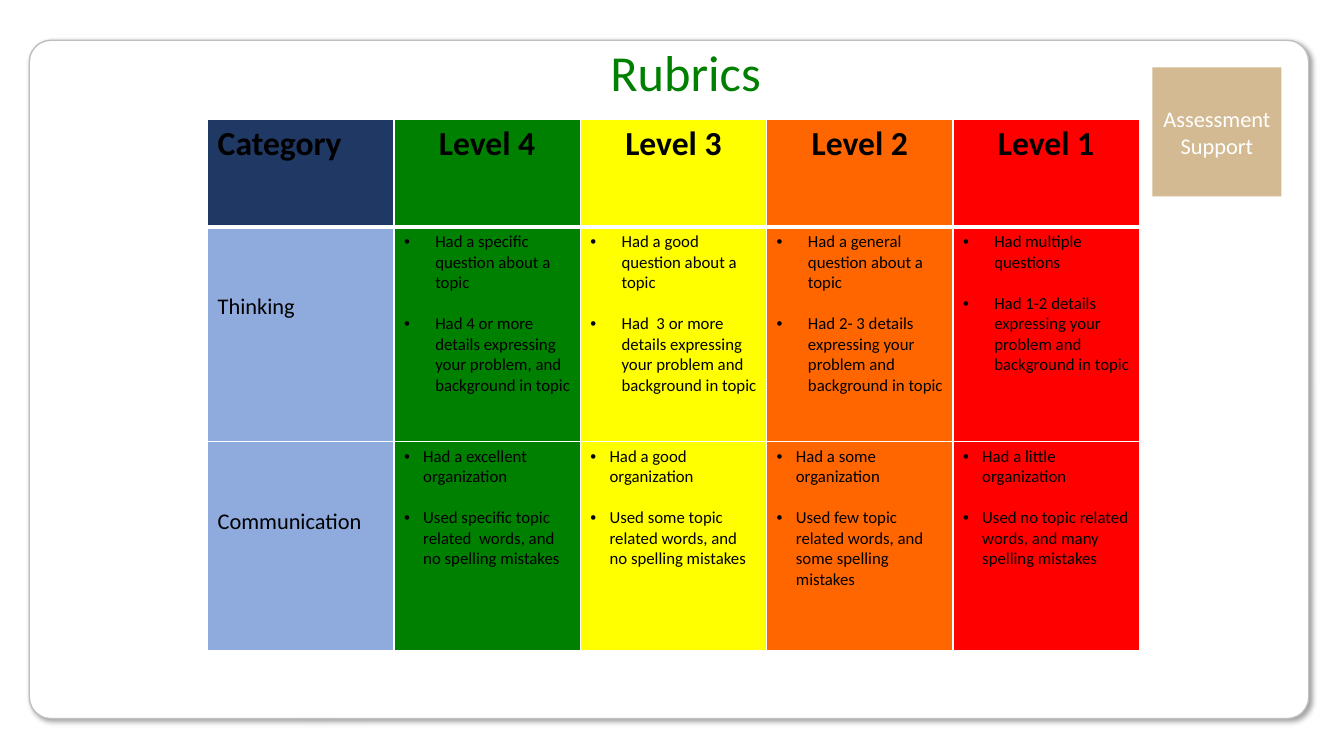
from dataclasses import dataclass

import pptx
import pptx.dml.color
import pptx.enum.shapes
import pptx.enum.text
import pptx.oxml
import pptx.oxml.ns
import pptx.util

RGBColor = pptx.dml.color.RGBColor
WHITE = RGBColor(0xFF, 0xFF, 0xFF)
BLACK = RGBColor(0x00, 0x00, 0x00)
GREEN = RGBColor(0x00, 0x80, 0x00)
YELLOW = RGBColor(0xFF, 0xFF, 0x00)
ORANGE = RGBColor(0xFF, 0x66, 0x00)
RED = RGBColor(0xFF, 0x00, 0x00)
NAVY = RGBColor(0x20, 0x38, 0x64)
PALE_BLUE = RGBColor(0x8F, 0xAA, 0xDC)
TAN = RGBColor(0xD3, 0xBA, 0x92)
GREY = RGBColor(0xBF, 0xBF, 0xBF)

FONT = "Calibri"
SLIDE_WIDTH = pptx.util.Inches(13.33)
SLIDE_HEIGHT = pptx.util.Inches(7.5)
CENTER = pptx.enum.text.PP_ALIGN.CENTER
SHAPES = pptx.enum.shapes.MSO_SHAPE


@dataclass
class Area:
    """A place on the slide, in percent of its width and height."""
    left: float
    top: float
    width: float
    height: float

    def box(self) -> tuple[int, int, int, int]:
        return (across(self.left), down(self.top),
                across(self.width), down(self.height))


@dataclass
class Level:
    name: str
    color: RGBColor
    thinking: tuple[str, str]
    communication: tuple[str, str]


CARD = Area(2.18, 5.33, 95.2, 89.73)
BADGE = Area(85.75, 8.93, 9.6, 17.07)
RUBRIC = Area(15.45, 15.73, 69.32, 70.27)
TITLE = Area(18.98, 4.8, 64.07, 9.47)
ROW_SHARES = (14.27, 28.4, 27.6)

LEVELS = (
    Level("Level 4", GREEN,
          ("Had a specific question about a topic",
           "Had 4 or more details expressing your problem, and background in topic"),
          ("Had a excellent organization",
           "Used specific topic related  words, and no spelling mistakes")),
    Level("Level 3", YELLOW,
          ("Had a good question about a topic",
           "Had  3 or more details expressing your problem and background in topic"),
          ("Had a good organization",
           "Used some topic related words, and no spelling mistakes")),
    Level("Level 2", ORANGE,
          ("Had a general question about a topic",
           "Had 2- 3 details expressing your problem and background in topic"),
          ("Had a some organization",
           "Used few topic related words, and some spelling mistakes")),
    Level("Level 1", RED,
          ("Had multiple questions",
           "Had 1-2 details expressing your problem and background in topic"),
          ("Had a little organization",
           "Used no topic related words, and many spelling mistakes")),
)


def across(percent: float) -> int:
    return round(SLIDE_WIDTH * percent / 100)


def down(percent: float) -> int:
    return round(SLIDE_HEIGHT * percent / 100)


def write(paragraph, text: str, size: float, color: RGBColor = BLACK,
          bold: bool = False, align=None) -> None:
    paragraph.alignment = align
    run = paragraph.add_run()
    run.text = text
    run.font.name = FONT
    run.font.size = pptx.util.Pt(size)
    run.font.bold = bold
    run.font.color.rgb = color


def add_panel(slide, preset, area: Area, fill: RGBColor):
    panel = slide.shapes.add_shape(preset, *area.box())
    panel.shadow.inherit = False
    panel.fill.solid()
    panel.fill.fore_color.rgb = fill
    panel.line.fill.background()
    return panel


def add_shadow(panel) -> None:
    effects = panel._element.spPr.find(pptx.oxml.ns.qn("a:effectLst"))
    effects.append(pptx.oxml.parse_xml(
        f'<a:outerShdw {pptx.oxml.ns.nsdecls("a")} blurRad="{pptx.util.Pt(4)}" '
        f'dist="{pptx.util.Pt(3)}" dir="2700000" algn="tl" rotWithShape="0">'
        f'<a:srgbClr val="{BLACK}"><a:alpha val="40000"/></a:srgbClr></a:outerShdw>'))


def style_cell(cell, fill: RGBColor, top_line: float, bottom_line: float) -> None:
    widths = {"lnL": 1, "lnR": 1, "lnT": top_line, "lnB": bottom_line}
    properties = cell._tc.get_or_add_tcPr()
    for side, width in widths.items():
        properties.append(pptx.oxml.parse_xml(
            f'<a:{side} {pptx.oxml.ns.nsdecls("a")} w="{pptx.util.Pt(width)}">'
            f'<a:solidFill><a:srgbClr val="{WHITE}"/></a:solidFill></a:{side}>'))
    cell.fill.solid()
    cell.fill.fore_color.rgb = fill


def write_bullets(cell, items: tuple[str, str], indent: float) -> None:
    frame = cell.text_frame
    for index, item in enumerate(items):
        paragraph = frame.add_paragraph() if index else frame.paragraphs[0]
        if index:
            paragraph.space_before = pptx.util.Pt(14.6)
        properties = paragraph._p.get_or_add_pPr()
        properties.set("marL", str(pptx.util.Inches(indent)))
        properties.set("indent", str(-pptx.util.Inches(indent)))
        for bullet in ('buFont {} typeface="Arial"', 'buChar {} char="•"'):
            properties.append(pptx.oxml.parse_xml(
                f'<a:{bullet.format(pptx.oxml.ns.nsdecls("a"))}/>'))
        write(paragraph, item, 12)


def add_rubric(slide) -> None:
    rubric = slide.shapes.add_table(
        len(ROW_SHARES), len(LEVELS) + 1, *RUBRIC.box()).table
    rubric.first_row = rubric.horz_banding = False
    for column in rubric.columns:
        column.width = across(RUBRIC.width / (len(LEVELS) + 1))
    for row, share in zip(rubric.rows, ROW_SHARES):
        row.height = down(share)

    # Category column
    for row, name in enumerate(("Category", "Thinking", "Communication")):
        category = rubric.cell(row, 0)
        style_cell(category, PALE_BLUE if row else NAVY,
                   3 if row == 1 else 1, 1 if row else 3)
        if row:
            category.margin_top = down(8.8)
        write(category.text_frame.paragraphs[0], name,
              16 if row else 24, bold=not row)

    # One column per level
    for column, level in enumerate(LEVELS, start=1):
        heading, thinking, communication = (
            rubric.cell(row, column) for row in range(len(ROW_SHARES)))
        style_cell(heading, level.color, 1, 3)
        style_cell(thinking, level.color, 3, 1)
        style_cell(communication, level.color, 1, 1)
        write(heading.text_frame.paragraphs[0], level.name, 24,
              bold=True, align=CENTER)
        write_bullets(thinking, level.thinking, 0.31)
        write_bullets(communication, level.communication, 0.19)


def main() -> None:
    deck = pptx.Presentation()
    deck.slide_width, deck.slide_height = SLIDE_WIDTH, SLIDE_HEIGHT
    slide = deck.slides.add_slide(deck.slide_layouts[6])

    # Card behind everything
    card = add_panel(slide, SHAPES.ROUNDED_RECTANGLE, CARD, WHITE)
    card.adjustments[0] = 0.032
    card.line.color.rgb = GREY
    card.line.width = pptx.util.Pt(1)
    add_shadow(card)

    # Corner badge
    badge = add_panel(slide, SHAPES.RECTANGLE, BADGE, TAN)
    badge.text_frame.word_wrap = True
    badge.text_frame.vertical_anchor = pptx.enum.text.MSO_ANCHOR.MIDDLE
    write(badge.text_frame.paragraphs[0], "Assessment Support", 16, WHITE,
          align=CENTER)

    # Rubric and its title
    add_rubric(slide)
    title = slide.shapes.add_textbox(*TITLE.box()).text_frame
    title.word_wrap = True
    write(title.paragraphs[0], "Rubrics", 36, GREEN, align=CENTER)

    deck.save("out.pptx")


if __name__ == "__main__":
    main()
